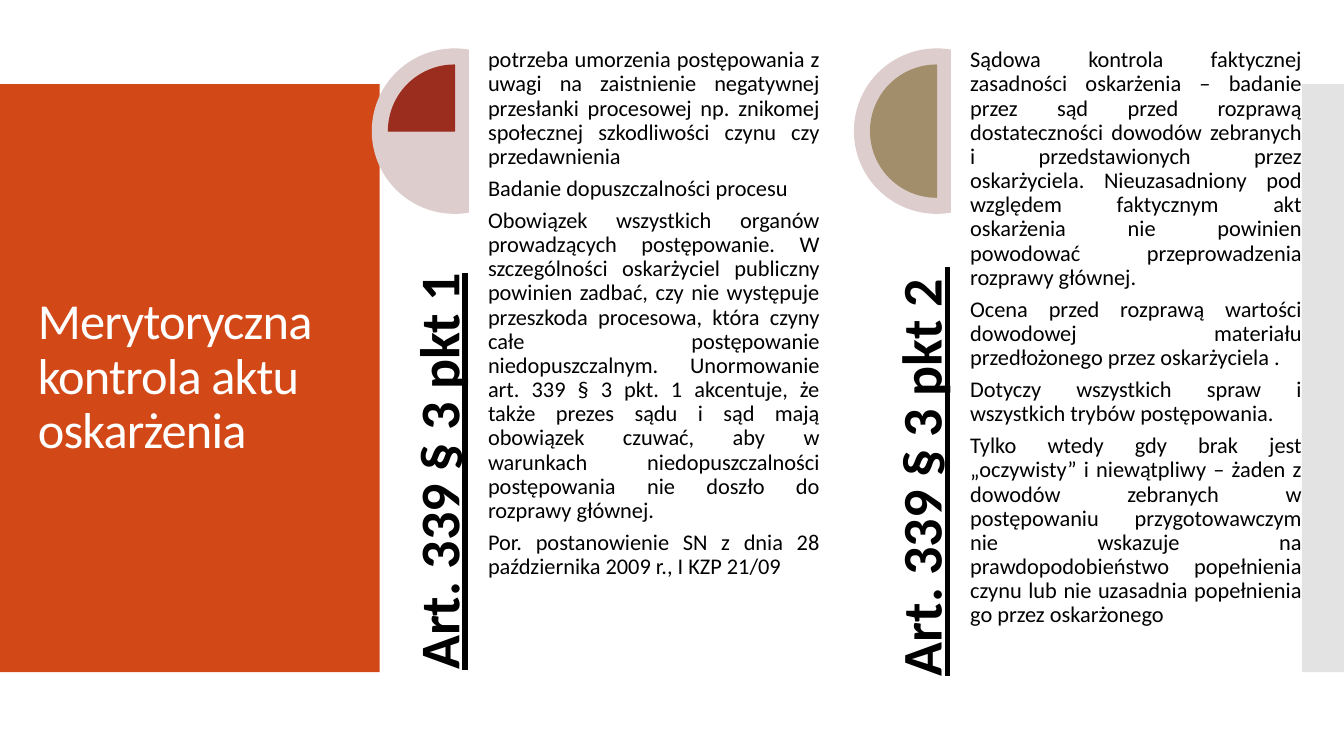
"""Build a slide on the substantive review of an indictment under art. 339 § 3."""
import pptx
import pptx.util
import pptx.dml.color
import pptx.enum.shapes
import pptx.enum.text
import pptx.oxml
import pptx.oxml.ns

Cm = pptx.util.Cm
Pt = pptx.util.Pt
RGBColor = pptx.dml.color.RGBColor
Shape = pptx.enum.shapes.MSO_SHAPE
Align = pptx.enum.text.PP_ALIGN
Anchor = pptx.enum.text.MSO_ANCHOR

ORANGE = RGBColor(0xD3, 0x48, 0x17)
GREY = RGBColor(0xC8, 0xC8, 0xC8)
PINK = RGBColor(0xDE, 0xCD, 0xCD)
RED = RGBColor(0x9B, 0x2D, 0x1F)
TAN = RGBColor(0xA2, 0x8E, 0x6A)
WHITE = RGBColor(0xFF, 0xFF, 0xFF)
BLACK = RGBColor(0x00, 0x00, 0x00)


def write_text(box, paragraphs, size, color, align, anchor, bold=None,
               underline=None, gap=0, margin=None, spacing=None):
    frame = box.text_frame
    frame.word_wrap = True
    frame.auto_size = pptx.enum.text.MSO_AUTO_SIZE.NONE
    frame.vertical_anchor = anchor
    if margin is not None:
        frame.margin_left = frame.margin_right = margin
        frame.margin_top = frame.margin_bottom = margin
    for index, text in enumerate(paragraphs):
        para = frame.add_paragraph() if index else frame.paragraphs[0]
        para.alignment = align
        para.line_spacing = 0.9
        para.space_before = Pt(0)
        para.space_after = Pt(gap)
        span = para.add_run()
        span.text = text
        span.font.name = "Calibri"
        span.font.size = Pt(size)
        span.font.bold = bold
        span.font.underline = underline
        span.font.color.rgb = color
        if spacing is not None:
            span.font._element.set("spc", str(spacing))


def add_plain_shape(page, kind, left, top, width, height, color, angles=()):
    shape = page.shapes.add_shape(kind, Cm(left), Cm(top), Cm(width), Cm(height))
    shape.shadow.inherit = False
    shape.fill.solid()
    shape.fill.fore_color.rgb = color
    shape.line.fill.background()
    for index, angle in enumerate(angles):
        shape.adjustments[index] = angle
    return shape


deck = pptx.Presentation()
deck.slide_width = Cm(33.87)
deck.slide_height = Cm(19.05)
page = deck.slides.add_slide(deck.slide_layouts[5])

add_plain_shape(page, Shape.RECTANGLE, 0, 2.12, 9.57, 14.82, ORANGE)
side_band = add_plain_shape(page, Shape.RECTANGLE, 32.81, 2.12, 1.06, 14.82, GREY)
band_color = side_band.element.spPr.find(".//" + pptx.oxml.ns.qn("a:srgbClr"))
band_color.append(pptx.oxml.parse_xml(
    f'<a:alpha {pptx.oxml.ns.nsdecls("a")} val="50000"/>'))

title = page.shapes.title
title.left, title.top = Cm(0.7), Cm(3.13)
title.width, title.height = Cm(8.18), Cm(12.78)
write_text(title, ["Merytoryczna kontrola aktu oskarżenia"], 36, WHITE,
           Align.LEFT, Anchor.MIDDLE, spacing=-60)
title.element.getparent().append(title.element)

columns = [
    ("Art. 339 § 3 pkt 1", RED, 108, [
        "potrzeba umorzenia postępowania z uwagi na zaistnienie negatywnej "
        "przesłanki procesowej np. znikomej społecznej szkodliwości czynu czy "
        "przedawnienia",
        "Badanie dopuszczalności procesu",
        "Obowiązek wszystkich organów prowadzących postępowanie. W szczególności "
        "oskarżyciel publiczny powinien zadbać, czy nie występuje przeszkoda "
        "procesowa, która czyny całe postępowanie niedopuszczalnym. Unormowanie "
        "art. 339 § 3 pkt. 1 akcentuje, że także prezes sądu i sąd mają obowiązek "
        "czuwać, aby w warunkach niedopuszczalności postępowania nie doszło do "
        "rozprawy głównej.",
        "Por. postanowienie SN z dnia 28 października 2009 r., I KZP 21/09",
    ]),
    ("Art. 339 § 3 pkt 2 ", TAN, 54, [
        "Sądowa kontrola faktycznej zasadności oskarżenia – badanie przez sąd "
        "przed rozprawą dostateczności dowodów zebranych i przedstawionych przez "
        "oskarżyciela. Nieuzasadniony pod względem faktycznym akt oskarżenia nie "
        "powinien powodować przeprowadzenia rozprawy głównej.",
        "Ocena przed rozprawą wartości dowodowej materiału przedłożonego przez "
        "oskarżyciela .",
        "Dotyczy wszystkich spraw i wszystkich trybów postępowania.",
        "Tylko wtedy gdy brak jest „oczywisty” i niewątpliwy – żaden z dowodów "
        "zebranych w postępowaniu przygotowawczym nie wskazuje na "
        "prawdopodobieństwo popełnienia czynu lub nie uzasadnia popełnienia go "
        "przez oskarżonego",
    ]),
]

for number, (heading, color, start_angle, paragraphs) in enumerate(columns):
    left = 9.37 + number * 12.15
    add_plain_shape(page, Shape.CHORD, left, 1.22, 4.17, 4.17, PINK, (48, 168))
    pie = add_plain_shape(page, Shape.PIE, left + 0.42, 1.64, 3.33, 3.33, color,
                          (start_angle, 162))
    pie.line.color.rgb = color
    pie.line.width = Pt(0.85)

    heading_box = page.shapes.add_textbox(Cm(left - 4.8), Cm(10.62),
                                          Cm(12.12), Cm(2.51))
    heading_box.rotation = 270
    write_text(heading_box, [heading], 40, BLACK, Align.CENTER, Anchor.BOTTOM,
               bold=True, underline=True, gap=14, margin=0)

    body_box = page.shapes.add_textbox(Cm(left + 2.93), Cm(1.22),
                                       Cm(8.36), Cm(16.69))
    write_text(body_box, paragraphs, 16, BLACK, Align.JUSTIFY, Anchor.TOP,
               gap=5.6, margin=0)

deck.save("out.pptx")
